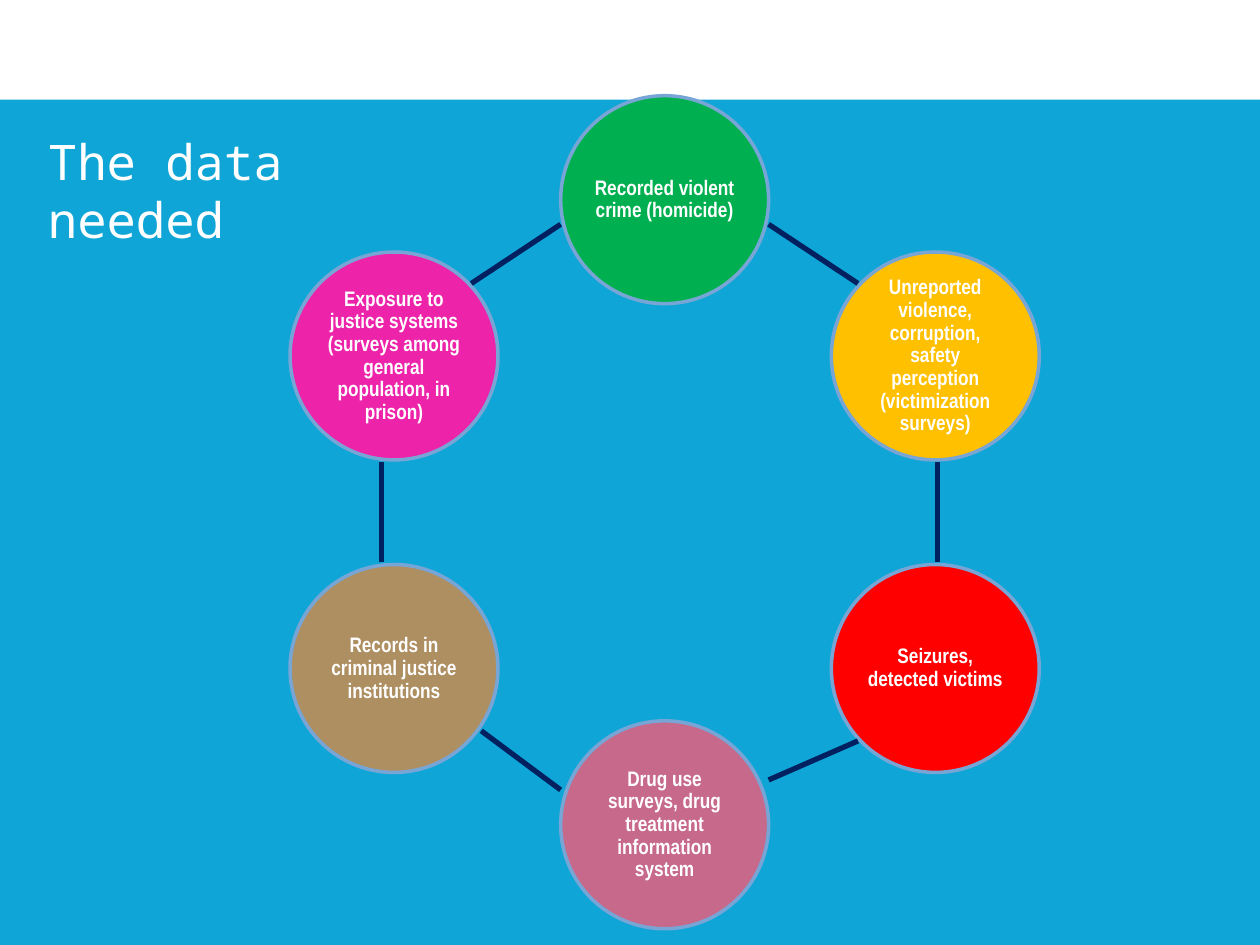
from dataclasses import dataclass
from math import cos, radians, sin

from lxml.etree import SubElement
from pptx import Presentation
from pptx.dml.color import RGBColor as RGB
from pptx.enum.shapes import MSO_CONNECTOR as CONN, MSO_SHAPE as SHAPE
from pptx.enum.text import MSO_ANCHOR as ANCHOR, MSO_AUTO_SIZE as FIT, PP_ALIGN as ALIGN
from pptx.oxml.ns import qn
from pptx.util import Pt


@dataclass(frozen=True)
class Theme:
    back: str = "0FA6D7"
    white: str = "FFFFFF"
    outline: str = "77A5D5"
    link: str = "002060"
    title_font: str = "Noto Sans Mono"
    title_size: float = 28
    label_font: str = "Arial Narrow"
    label_size: float = 12
    outline_width: float = 2
    link_width: float = 3


def apply(obj, values):
    for name, value in values.items():
        setattr(obj, name, value)


class Deck:
    def __init__(self, theme):
        self.theme = theme
        self.prs = Presentation()
        self.prs.slide_width, self.prs.slide_height = Pt(720), Pt(540)
        self.slide = None

    def add_slide(self):
        self.slide = self.prs.slides.add_slide(self.prs.slide_layouts[5])
        fill = self.slide.background.fill
        fill.solid()
        fill.fore_color.rgb = RGB.from_string(self.theme.back)

    def set_text(self, sp, text, align, frame, font):
        tf = sp.text_frame
        apply(tf, {"word_wrap": True, "auto_size": FIT.NONE, **frame})
        p = tf.paragraphs[0]
        p.alignment = align
        r = p.add_run()
        r.text = text
        apply(r.font, font)
        r.font.color.rgb = RGB.from_string(self.theme.white)
        return p

    def title(self, text, x, y, w, h):
        t, sp = self.theme, self.slide.shapes.title
        apply(sp, {"left": Pt(x), "top": Pt(y), "width": Pt(w), "height": Pt(h)})
        self.set_text(sp, text, ALIGN.LEFT, {"vertical_anchor": ANCHOR.TOP},
                      {"name": t.title_font, "size": Pt(t.title_size)})

    def shape(self, kind, x, y, w, h, color):
        sp = self.slide.shapes.add_shape(kind, Pt(x), Pt(y), Pt(w), Pt(h))
        sp.shadow.inherit = False
        sp.fill.solid()
        sp.fill.fore_color.rgb = RGB.from_string(color)
        return sp

    def band(self, height):
        sp = self.shape(SHAPE.RECTANGLE, 0, 0, 720, height, self.theme.white)
        sp.line.fill.background()

    def circle(self, text, cx, cy, radius, color):
        t = self.theme
        sp = self.shape(SHAPE.OVAL, cx - radius, cy - radius, 2 * radius, 2 * radius, color)
        sp.line.color.rgb = RGB.from_string(t.outline)
        sp.line.width = Pt(t.outline_width)
        sides = ("left", "top", "right", "bottom")
        frame = {f"margin_{side}": Pt(1.4) for side in sides}
        frame["vertical_anchor"] = ANCHOR.MIDDLE
        p = self.set_text(sp, text, ALIGN.CENTER, frame,
                          {"name": t.label_font, "size": Pt(t.label_size), "bold": True})
        p.line_spacing = 0.9

    def link(self, *ends):
        c = self.slide.shapes.add_connector(CONN.STRAIGHT, *(Pt(v) for v in ends))
        c.line.color.rgb = RGB.from_string(self.theme.link)
        c.line.width = Pt(self.theme.link_width)
        SubElement(c._element.spPr, qn("a:effectLst"))


# Data sources, clockwise from the top
SOURCES = [
    ("Recorded violent crime (homicide)", "00B050"),
    ("Unreported violence, corruption, safety perception (victimization surveys)", "FFC000"),
    ("Seizures, detected victims", "FF0000"),
    ("Drug use surveys, drug treatment information system", "C7698B"),
    ("Records in criminal justice institutions", "AE8F62"),
    ("Exposure to justice systems (surveys among general population, in prison)", "ED23AA"),
]
# Links between neighbours: x1, y1, x2, y2
LINKS = [
    (320.4, 128.2, 269.3, 162),
    (439.2, 128.2, 490.3, 162),
    (535.7, 264.2, 535.7, 321.1),
    (490.3, 423.4, 439.2, 445.7),
    (320.4, 451.4, 275, 417.6),
    (218.2, 264.2, 218.2, 321.1),
]
CENTER_X, CENTER_Y, RING, RADIUS = 379.8, 292.7, 178.6, 59.4


def main():
    deck = Deck(Theme())
    deck.add_slide()

    # Header band and title
    deck.band(57)
    deck.title("The data needed", 20.2, 71.3, 244, 75)

    # Ring of sources
    for i, (text, color) in enumerate(SOURCES):
        angle = radians(i * 360 / len(SOURCES))
        deck.circle(text, CENTER_X + RING * sin(angle), CENTER_Y - RING * cos(angle),
                    RADIUS, color)

    # Links
    for ends in LINKS:
        deck.link(*ends)

    deck.prs.save("out.pptx")


if __name__ == "__main__":
    main()
